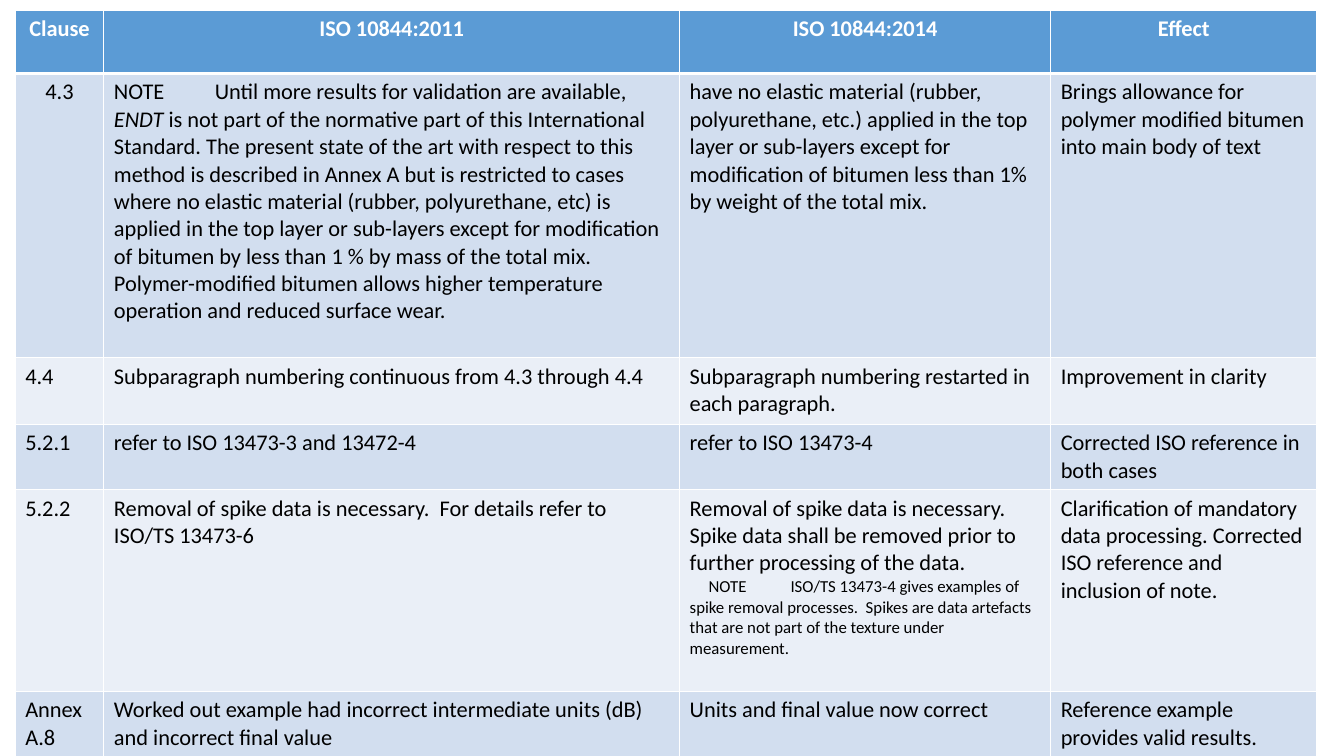
"""Build the clause comparison slide for ISO 10844:2011 and ISO 10844:2014."""
from dataclasses import dataclass

from lxml.etree import SubElement
from pptx import Presentation
from pptx.dml.color import RGBColor
from pptx.enum.text import PP_ALIGN
from pptx.oxml.ns import qn
from pptx.table import _Cell
from pptx.util import Inches, Pt


@dataclass(frozen=True)
class Theme:
    font: str = "Calibri"
    body_size: float = 16
    note_size: float = 12
    header_fill: str = "5B9BD5"
    band_fills: tuple[str, str] = ("D2DEEF", "EAEFF7")
    header_text: str = "FFFFFF"
    body_text: str = "000000"
    border: str = "FFFFFF"
    thin: float = 1
    thick: float = 3


@dataclass(frozen=True)
class Span:
    text: str
    italic: bool = False


@dataclass(frozen=True)
class Para:
    spans: tuple[Span, ...]
    size: float = Theme.body_size
    indent: float = 0
    centred: bool = False


@dataclass(frozen=True)
class Row:
    height: float
    cells: tuple[tuple[Para, ...], ...]


def plain(text: str, centred: bool = False) -> tuple[Para, ...]:
    """Return cell content made of one plain paragraph."""
    return (Para((Span(text),), centred=centred),)


THEME = Theme()
SLIDE_WIDTH, SLIDE_HEIGHT = Inches(13.33), Inches(7.5)
LEFT, TOP = 1.13, 1.33
COLUMN_WIDTHS = (6.6, 42.84, 27.61, 19.81)

VALIDATION_NOTE = (Para((
    Span("NOTE\tUntil more results for validation are available, "),
    Span("ENDT ", italic=True),
    Span("is not part of the normative part of this International Standard. The present state of "
         "the art with respect to this method is described in Annex A but is restricted to cases "
         "where no elastic material (rubber, polyurethane, etc) is applied in the top layer or "
         "sub-layers except for modification of bitumen by less than 1 % by mass of the total mix. "
         "Polymer-modified bitumen allows higher temperature operation and reduced surface wear."),
)),)

SPIKE_REMOVAL = (
    *plain("Removal of spike data is necessary. Spike data shall be removed prior to further "
           "processing of the data."),
    Para((Span("NOTE\tISO/TS 13473-4 gives examples of spike removal processes.  Spikes are data "
               "artefacts that are not part of the texture under measurement."),),
         size=THEME.note_size, indent=1.41),
)

ROWS = (
    Row(8.4, tuple(plain(title, centred=True)
                   for title in ("Clause", "ISO 10844:2011", "ISO 10844:2014", "Effect"))),
    Row(37.6, (
        plain("4.3", centred=True),
        VALIDATION_NOTE,
        plain("have no elastic material (rubber, polyurethane, etc.) applied in the top layer or "
              "sub-layers except for modification of bitumen less than 1% by weight of the total mix."),
        plain("Brings allowance for polymer modified bitumen into main body of text"))),
    Row(8.8, (
        plain("4.4"),
        plain("Subparagraph numbering continuous from 4.3 through 4.4"),
        plain("Subparagraph numbering restarted in each paragraph."),
        plain("Improvement in clarity"))),
    Row(8.67, (
        plain("5.2.1"),
        plain("refer to ISO 13473-3 and 13472-4"),
        plain("refer to ISO 13473-4"),
        plain("Corrected ISO reference in both cases"))),
    Row(26.67, (
        plain("5.2.2"),
        plain("Removal of spike data is necessary.  For details refer to ISO/TS 13473-6"),
        SPIKE_REMOVAL,
        plain("Clarification of mandatory data processing. Corrected ISO reference and inclusion "
              "of note."))),
    Row(8.67, (
        plain("Annex A.8"),
        plain("Worked out example had incorrect intermediate units (dB) and incorrect final value"),
        plain("Units and final value now correct"),
        plain("Reference example provides valid results."))),
)


def across(percent: float) -> int:
    """Return a share of the slide width."""
    return round(SLIDE_WIDTH * percent / 100)


def down(percent: float) -> int:
    """Return a share of the slide height."""
    return round(SLIDE_HEIGHT * percent / 100)


def draw_borders(cell: _Cell, row_index: int) -> None:
    """Rule the four sides, with a thick line under the header."""
    top = THEME.thick if row_index == 1 else THEME.thin
    bottom = THEME.thick if row_index == 0 else THEME.thin
    properties = cell._tc.get_or_add_tcPr()
    for side, width in (("L", THEME.thin), ("R", THEME.thin), ("T", top), ("B", bottom)):
        line = SubElement(properties, qn(f"a:ln{side}"), w=str(Pt(width)))
        fill = SubElement(line, qn("a:solidFill"))
        SubElement(fill, qn("a:srgbClr"), val=THEME.border)


def write_cell(cell: _Cell, content: tuple[Para, ...], header: bool) -> None:
    """Write the paragraphs of a cell and format their runs."""
    frame = cell.text_frame
    frame.text = "\n".join(para.spans[0].text for para in content)
    for paragraph, para in zip(frame.paragraphs, content):
        for span in para.spans[1:]:
            paragraph.add_run().text = span.text
        if para.centred:
            paragraph.alignment = PP_ALIGN.CENTER
        if para.indent:
            properties = paragraph._p.get_or_add_pPr()
            properties.set("marL", "0")
            properties.set("indent", str(across(para.indent)))
        for run, span in zip(paragraph.runs, para.spans):
            run.font.name = THEME.font
            run.font.size = Pt(para.size)
            run.font.bold = header
            run.font.italic = span.italic
            run.font.color.rgb = RGBColor.from_string(
                THEME.header_text if header else THEME.body_text)


def main() -> None:
    """Create the deck and save it."""
    deck = Presentation()
    deck.slide_width, deck.slide_height = SLIDE_WIDTH, SLIDE_HEIGHT
    page = deck.slides.add_slide(deck.slide_layouts[6])
    table = page.shapes.add_table(
        len(ROWS), len(COLUMN_WIDTHS), across(LEFT), down(TOP),
        across(sum(COLUMN_WIDTHS)), down(sum(row.height for row in ROWS))).table
    for column, width in zip(table.columns, COLUMN_WIDTHS):
        column.width = across(width)
    for row_index, row in enumerate(ROWS):
        table.rows[row_index].height = down(row.height)
        header = row_index == 0
        fill = THEME.header_fill if header else THEME.band_fills[(row_index - 1) % 2]
        for column_index, content in enumerate(row.cells):
            cell = table.cell(row_index, column_index)
            draw_borders(cell, row_index)
            cell.fill.solid()
            cell.fill.fore_color.rgb = RGBColor.from_string(fill)
            write_cell(cell, content, header)
    deck.save("out.pptx")


if __name__ == "__main__":
    main()
